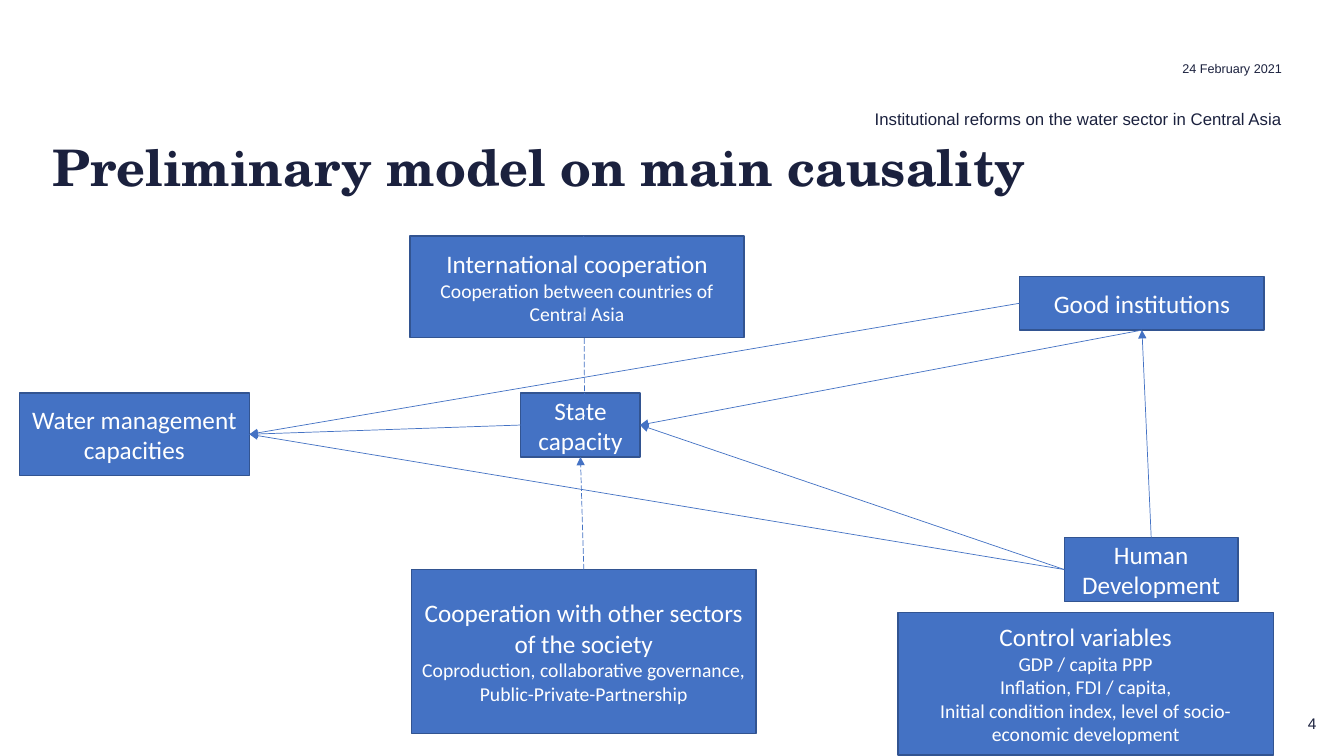
from lxml.etree import SubElement
from pptx import Presentation
from pptx.dml.color import RGBColor
from pptx.enum.dml import MSO_LINE
from pptx.enum.shapes import MSO_CONNECTOR, MSO_SHAPE
from pptx.enum.text import MSO_ANCHOR, PP_ALIGN
from pptx.oxml.ns import qn
from pptx.util import Inches, Pt

COLS, ROWS = 160, 90
TOP, LEFT, BOTTOM, RIGHT = range(4)
NAVY, BLUE, EDGE, WHITE = "1B213E", "4472C4", "325491", "FFFFFF"


def color(code):
    return RGBColor.from_string(code)


def write(shape, *lines, font="Arial", sizes=(12,), ink=NAVY, bold=False,
          align=PP_ALIGN.LEFT, anchor=MSO_ANCHOR.TOP, inset=0):
    """Fill a shape with one paragraph per line; the last size serves all further lines."""
    frame = shape.text_frame
    frame.word_wrap = True
    frame.vertical_anchor = anchor
    frame.margin_left = frame.margin_right = Inches(inset)
    frame.margin_top = frame.margin_bottom = Inches(inset / 2)
    for i, line in enumerate(lines):
        para = frame.paragraphs[0] if i == 0 else frame.add_paragraph()
        para.alignment = align
        run = para.add_run()
        run.text = line
        run.font.name = font
        run.font.size = Pt(sizes[min(i, len(sizes) - 1)])
        run.font.bold = bold
        run.font.color.rgb = color(ink)


class Board:
    """The current slide, measured in cells of a 160 by 90 grid."""

    def __init__(self, deck):
        self.slide = deck.slides.add_slide(deck.slide_layouts[5])
        self.shapes = self.slide.shapes
        self.cell = deck.slide_width / COLS, deck.slide_height / ROWS

    def place(self, *cells):
        return [round(n * self.cell[i % 2]) for i, n in enumerate(cells)]

    def title(self, text, *cells):
        head = self.shapes.title
        head.left, head.top, head.width, head.height = self.place(*cells)
        write(head, text, font="TeX Gyre Schola", sizes=(36,), bold=True)

    def label(self, text, *cells, **style):
        write(self.shapes.add_textbox(*self.place(*cells)), text, **style)

    def block(self, *cells, fill=BLUE):
        shape = self.shapes.add_shape(MSO_SHAPE.RECTANGLE, *self.place(*cells))
        shape.shadow.inherit = False
        shape.fill.solid()
        shape.fill.fore_color.rgb = color(fill)
        return shape

    def number(self, text, *cells):
        shape = self.block(*cells, fill=WHITE)
        shape.line.fill.background()
        write(shape, text, sizes=(11,), align=PP_ALIGN.CENTER, anchor=MSO_ANCHOR.MIDDLE)

    def box(self, *lines, at):
        shape = self.block(*at)
        shape.line.color.rgb = color(EDGE)
        shape.line.width = Pt(1)
        write(shape, *lines, font="Calibri", sizes=(18, 14), ink=WHITE,
              align=PP_ALIGN.CENTER, anchor=MSO_ANCHOR.MIDDLE, inset=0.1)
        return shape

    def arrow(self, *cells, dash=False):
        link = self.shapes.add_connector(MSO_CONNECTOR.STRAIGHT, *self.place(*cells))
        link.line.color.rgb = color(BLUE)
        link.line.width = Pt(0.5)
        if dash:
            link.line.dash_style = MSO_LINE.LONG_DASH
        props = link._element.spPr
        SubElement(props.find(qn("a:ln")), qn("a:tailEnd"), type="triangle")
        SubElement(props, qn("a:effectLst"))
        return link

    def join(self, start, side, end, face, dash=False):
        link = self.arrow(0, 0, 1, 1, dash=dash)
        link.begin_connect(start, side)
        link.end_connect(end, face)


def main():
    deck = Presentation()
    deck.slide_width, deck.slide_height = Inches(13.33), Inches(7.5)
    board = Board(deck)
    board.number("4", 153.5, 83.4, 5.4, 5.5)
    board.title("Preliminary model on main causality", 6.2, 16.2, 145.3, 13.1)
    board.label("Institutional reforms on the water sector in Central Asia",
                83.5, 10.6, 69.1, 4.8, align=PP_ALIGN.RIGHT, anchor=MSO_ANCHOR.BOTTOM)
    board.label("24 February 2021", 116.6, 7.3, 36, 2.4, sizes=(9,), align=PP_ALIGN.RIGHT)

    water = board.box("Water management capacities", at=(2.3, 46.8, 27.4, 9.8))
    state = board.box("State capacity", at=(62, 46.8, 14.2, 7.6))
    human = board.box("Human Development", at=(126.7, 64, 20.7, 7.6))
    good = board.box("Good institutions", at=(121.4, 32.9, 29.1, 6.4))
    social = board.box("Cooperation with other sectors of the society",
                       "Coproduction, collaborative governance, Public-Private-Partnership",
                       at=(49, 67.8, 41, 19.5))
    board.box("Control variables", "GDP / capita PPP", "Inflation, FDI / capita,",
              "Initial condition index, level of socio-economic development",
              at=(106.9, 72.9, 44.7, 17))
    board.box("International cooperation", "Cooperation between countries of Central Asia",
              at=(48.8, 28.1, 39.8, 12.1))

    for start, side in ((state, LEFT), (human, LEFT), (good, LEFT)):
        board.join(start, side, water, RIGHT)
    for start, side in ((good, BOTTOM), (human, LEFT)):
        board.join(start, side, state, RIGHT)
    board.join(human, TOP, good, BOTTOM)
    board.join(social, TOP, state, BOTTOM, dash=True)
    board.arrow(69.5, 28.1, 69.6, 52.4, dash=True)
    deck.save("out.pptx")


if __name__ == "__main__":
    main()
